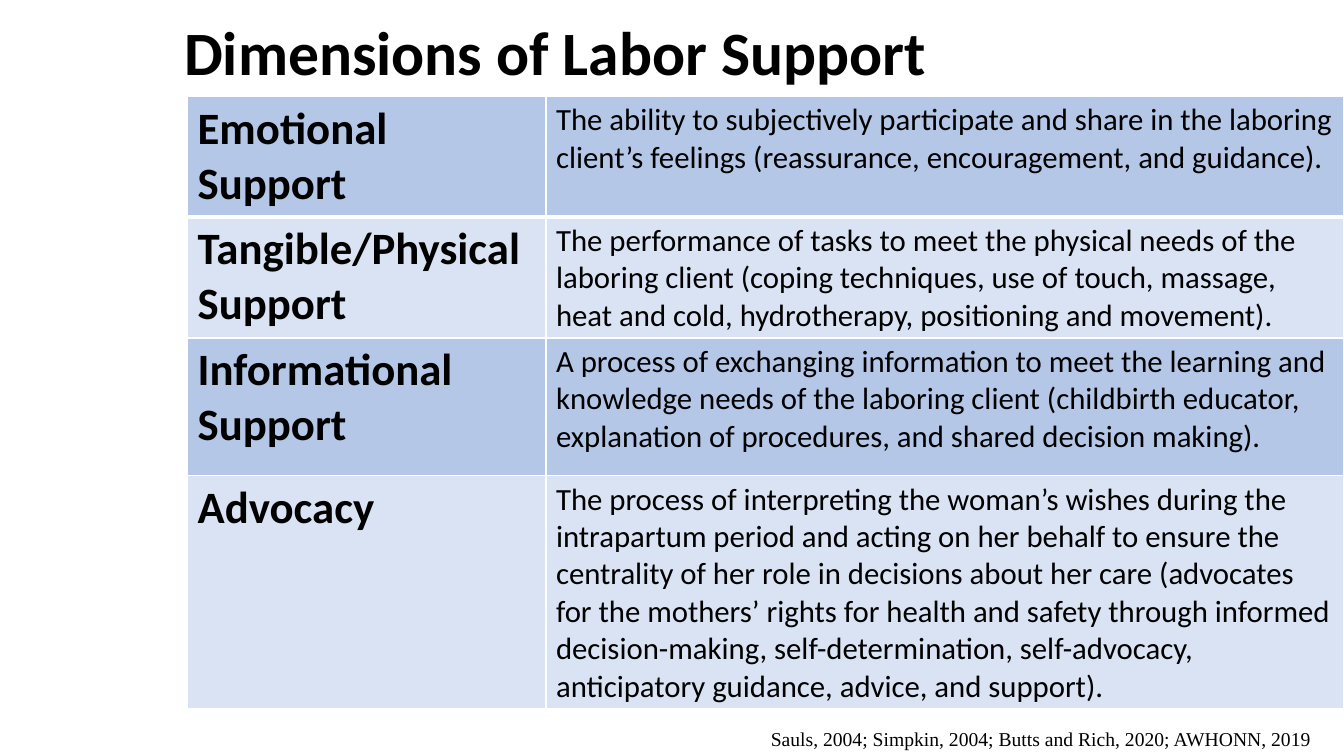
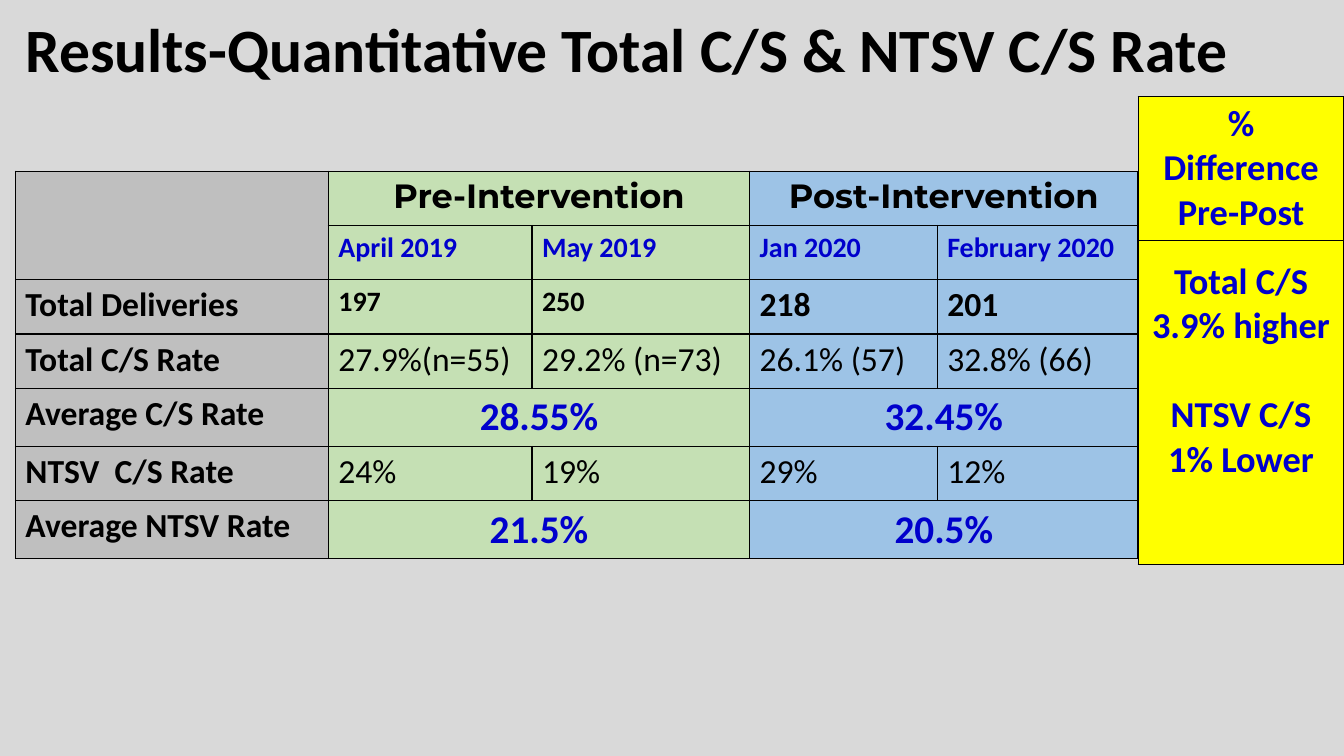
from collections import namedtuple

from lxml import etree
from pptx import Presentation
from pptx.dml.color import RGBColor
from pptx.enum.text import MSO_ANCHOR, PP_ALIGN
from pptx.oxml.ns import qn
from pptx.util import Pt

LEFT, CENTER = PP_ALIGN.LEFT, PP_ALIGN.CENTER
TOP, MIDDLE = MSO_ANCHOR.TOP, MSO_ANCHOR.MIDDLE

HEX = {
    "black": "000000",
    "white": "FFFFFF",
    "page": "D9D9D9",
    "gray": "BFBFBF",
    "green": "C5E0B4",
    "sky": "9DC3E6",
    "deep": "B4C7E7",
    "pale": "DAE3F3",
    "yellow": "FFFF00",
    "blue": "0000CC",
}

Look = namedtuple("Look", "size bold color font align",
                  defaults=(False, "black", "Calibri", LEFT))

TITLE = Look(44, True)
CITE = Look(14, font="Times New Roman")
NAME = Look(32, True)
BODY = Look(22)
HEAD = Look(24, True, font="Montserrat", align=CENTER)
MONTH = Look(20, True, "blue")
LABEL = Look(24, True)
SMALL = Look(20, True)
VALUE = Look(24)
MEAN = Look(28, True, "blue", align=CENTER)
DIFF = Look(26, True, "blue", align=CENTER)

SUPPORT = [
    ("Emotional Support",
     "The ability to subjectively participate and share in the laboring "
     "client’s feelings (reassurance, encouragement, and guidance)."),
    ("Tangible/Physical Support",
     "The performance of tasks to meet the physical needs of the laboring "
     "client (coping techniques, use of touch, massage, heat and cold, "
     "hydrotherapy, positioning and movement)."),
    ("Informational Support",
     "A process of exchanging information to meet the learning and "
     "knowledge needs of the laboring client (childbirth educator, "
     "explanation of procedures, and shared decision making)."),
    ("Advocacy",
     "The process of interpreting the woman’s wishes during the intrapartum "
     "period and acting on her behalf to ensure the centrality of her role "
     "in decisions about her care (advocates for the mothers’ rights for "
     "health and safety through informed decision-making, "
     "self-determination, self-advocacy, anticipatory guidance, advice, "
     "and support)."),
]

RATES = [
    ("", ["Pre-Intervention", "Post-Intervention"], HEAD, HEAD),
    ("", ["April 2019", "May 2019", "Jan 2020", "February 2020"],
     MONTH, MONTH),
    ("Total Deliveries", ["197", "250", "218", "201"], SMALL, LABEL),
    ("Total C/S Rate",
     ["27.9%(n=55)", "29.2% (n=73)", "26.1% (57)", "32.8% (66)"],
     VALUE, VALUE),
    ("Average C/S Rate", ["28.55%", "32.45%"], MEAN, MEAN),
    ("NTSV  C/S Rate", ["24%", "19%", "29%", "12%"], VALUE, VALUE),
    ("Average NTSV Rate", ["21.5%", "20.5%"], MEAN, MEAN),
]


def rgb(name):
    return RGBColor.from_string(HEX[name])


def write(frame, lines, look, gap=0):
    for i, line in enumerate(lines):
        para = frame.add_paragraph() if i else frame.paragraphs[0]
        para.text = line
        para.alignment = look.align
        if i and gap:
            para.space_before = Pt(gap)
        font = para.font
        font.name, font.size, font.bold = look.font, Pt(look.size), look.bold
        font.color.rgb = rgb(look.color)


def add_text(slide, box, text, look, anchor=TOP):
    frame = slide.shapes.add_textbox(*map(Pt, box)).text_frame
    frame.word_wrap = True
    frame.vertical_anchor = anchor
    write(frame, [text], look)
    return frame


def add_title(slide, box, text):
    frame = add_text(slide, box, text, TITLE, MIDDLE)
    frame.paragraphs[0].line_spacing = 0.9


def add_page(deck, color):
    slide = deck.slides.add_slide(deck.slide_layouts[6])
    fill = slide.background.fill
    fill.solid()
    fill.fore_color.rgb = rgb(color)
    return slide


def add_grid(slide, left, top, cols, rows):
    frame = slide.shapes.add_table(
        len(rows), len(cols), Pt(left), Pt(top), Pt(sum(cols)), Pt(sum(rows)))
    table = frame.table
    table.first_row = table.horz_banding = False
    for col, width in zip(table.columns, cols):
        col.width = Pt(width)
    for row, height in zip(table.rows, rows):
        row.height = Pt(height)
    return table


def paint(cell, color, edge, widths=(1, 1, 1, 1)):
    cell.fill.solid()
    cell.fill.fore_color.rgb = rgb(color)
    props = cell._tc.get_or_add_tcPr()
    for i, (side, width) in enumerate(zip("LRTB", widths)):
        line = etree.Element(qn(f"a:ln{side}"), w=str(Pt(width)))
        solid = etree.SubElement(line, qn("a:solidFill"))
        etree.SubElement(solid, qn("a:srgbClr"), val=HEX[edge])
        props.insert(i, line)


def add_support(deck):
    slide = add_page(deck, "white")
    add_title(slide, (124.5, 10, 728, 59), "Dimensions of Labor Support")
    add_text(slide, (543.5, 515.5, 416, 24),
             "Sauls, 2004; Simpkin, 2004; Butts and Rich, 2020; AWHONN, 2019",
             CITE)
    table = add_grid(slide, 134, 69, (256, 570), (86, 86, 98.5, 166))
    for r, texts in enumerate(SUPPORT):
        widths = (1, 1, 3 if r == 1 else 1, 3 if r == 0 else 1)
        for c, (text, look) in enumerate(zip(texts, (NAME, BODY))):
            cell = table.cell(r, c)
            paint(cell, ("deep", "pale")[r % 2], "white", widths)
            write(cell.text_frame, [text], look)


def add_rates(slide):
    cols = (223.5, 145.5, 155.5, 134, 143.5)
    rows = [41.5 if row[2] is MEAN else 38.8 for row in RATES]
    table = add_grid(slide, 11, 122.3, cols, rows)
    fills = ("gray", "green", "green", "sky", "sky")
    for r, (label, values, pre, post) in enumerate(RATES):
        for c, color in enumerate(fills):
            paint(table.cell(r, c), color, "black")
        if label:
            write(table.cell(r, 0).text_frame, [label], LABEL)
        span = 4 // len(values)
        for i, value in enumerate(values):
            c = 1 + i * span
            cell = table.cell(r, c)
            if span > 1:
                cell.merge(table.cell(r, c + span - 1))
            write(cell.text_frame, [value], pre if c < 3 else post)
    table.cell(0, 0).merge(table.cell(1, 0))


def add_change(slide):
    table = add_grid(slide, 813, 69, (147,), (103, 231))
    blocks = [
        (["% Difference", "Pre-Post"], 0, 3.6),
        (["Total C/S 3.9% higher", "NTSV C/S 1% Lower"], 31.7, 13.4),
    ]
    for r, (lines, gap, inset) in enumerate(blocks):
        cell = table.cell(r, 0)
        paint(cell, "yellow", "black")
        cell.margin_top = Pt(inset)
        write(cell.text_frame, lines, DIFF, gap)


def add_results(deck):
    slide = add_page(deck, "page")
    add_title(slide, (11, 0, 919, 75),
              "Results-Quantitative Total C/S & NTSV C/S Rate")
    add_rates(slide)
    add_change(slide)


def main():
    deck = Presentation()
    deck.slide_width, deck.slide_height = Pt(960), Pt(540)
    add_support(deck)
    add_results(deck)
    deck.save("out.pptx")


if __name__ == "__main__":
    main()
